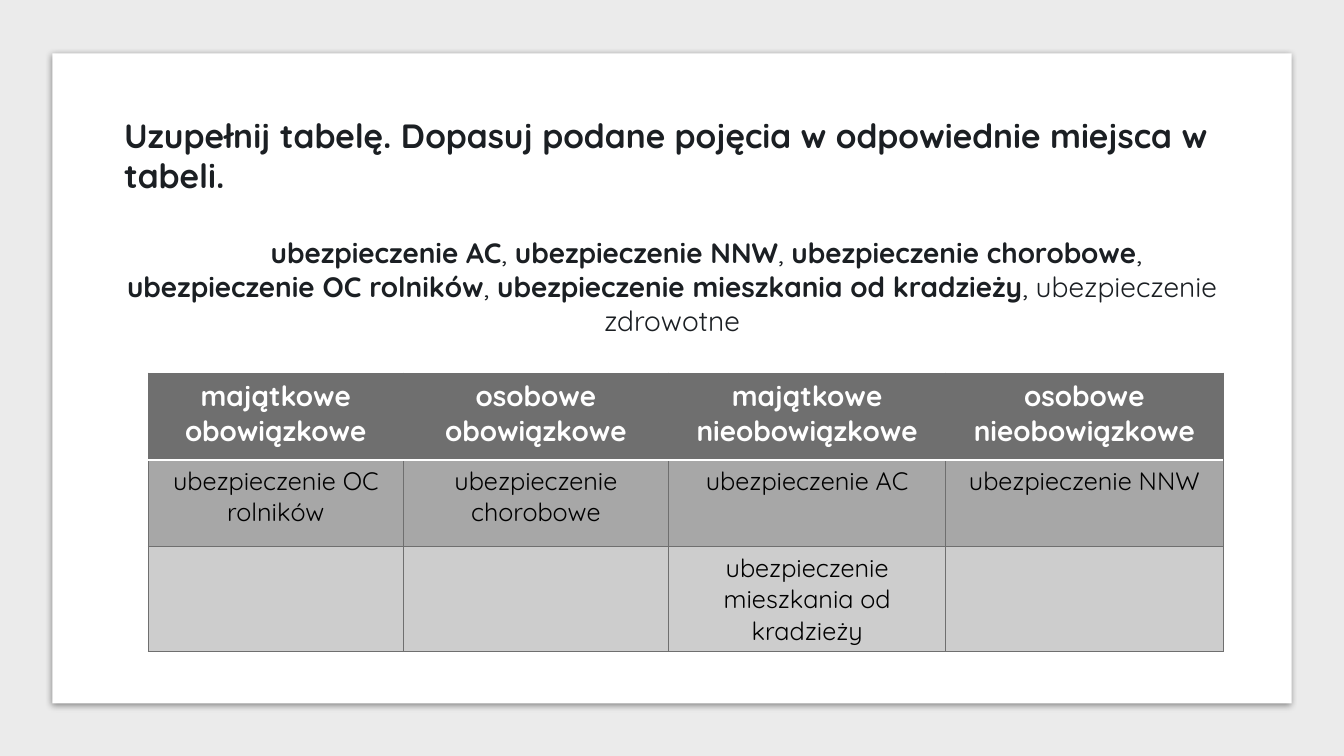
"""Build the insurance table exercise slide."""
from dataclasses import dataclass
from itertools import product

from lxml.etree import SubElement
from pptx import Presentation
from pptx.dml.color import RGBColor
from pptx.enum.shapes import MSO_SHAPE
from pptx.enum.text import MSO_ANCHOR, MSO_AUTO_SIZE, PP_ALIGN
from pptx.oxml import parse_xml
from pptx.oxml.ns import nsdecls, qn
from pptx.util import Inches, Pt

FONT = "Quicksand"
INK = RGBColor(0x1B, 0x1F, 0x23)
BLACK = RGBColor(0x00, 0x00, 0x00)
WHITE = RGBColor(0xFF, 0xFF, 0xFF)
SLATE = RGBColor(0x36, 0x3D, 0x46)
PALE = RGBColor(0xEB, 0xEB, 0xEB)
DARK = RGBColor(0x6F, 0x6F, 0x6F)
MID = RGBColor(0xA7, 0xA7, 0xA7)
LIGHT = RGBColor(0xCD, 0xCD, 0xCD)

WIDTH, HEIGHT = Inches(13.33), Inches(7.5)
COL, ROW = WIDTH / 100, HEIGHT / 100


@dataclass(frozen=True)
class Area:
    """A rectangle on a grid of 100 columns by 100 rows."""
    x: float
    y: float
    w: float
    h: float

    def box(self) -> tuple[int, int, int, int]:
        """Return left, top, width and height in EMU."""
        return int(self.x * COL), int(self.y * ROW), int(self.w * COL), int(self.h * ROW)


@dataclass(frozen=True)
class Backdrop:
    """A plain filled rectangle behind the content."""
    area: Area
    fill: RGBColor
    shadow: bool = False


@dataclass(frozen=True)
class Band:
    """A table row with its height and look."""
    texts: tuple[str, ...]
    height: float
    fill: RGBColor
    color: RGBColor = BLACK
    size: int = 18
    bold: bool = False
    bottom: tuple[RGBColor, float] = (DARK, 0.75)
    top: tuple[RGBColor, float] = (DARK, 0.75)


BACKDROPS = (
    Backdrop(Area(0, 0, 100, 100), PALE),
    Backdrop(Area(3.9, 7.05, 92.2, 86), WHITE, shadow=True),
)
TITLE_AREA = Area(8.48, 14.53, 83.05, 12)
TERMS_AREA = Area(8.48, 30.53, 83.05, 14.7)
TITLE = "Uzupełnij tabelę. Dopasuj podane pojęcia w odpowiednie miejsca w tabeli."
TERMS = ("ubezpieczenie AC", "ubezpieczenie NNW", "ubezpieczenie chorobowe",
         "ubezpieczenie OC rolników", "ubezpieczenie mieszkania od kradzieży")
LAST_TERM = "ubezpieczenie zdrowotne"

TABLE_X, TABLE_Y = 11.03, 49.35
COLUMNS = (18.98, 19.73, 20.63, 20.63)
RULE = (WHITE, 1.5)
BANDS = (
    Band(("majątkowe obowiązkowe", "osobowe obowiązkowe", "majątkowe nieobowiązkowe",
          "osobowe nieobowiązkowe"), 11.5, DARK, WHITE, 20, True, bottom=RULE),
    Band(("ubezpieczenie OC rolników", "ubezpieczenie chorobowe", "ubezpieczenie AC",
          "ubezpieczenie NNW"), 11.5, MID, top=RULE),
    Band(("", "", "ubezpieczenie mieszkania od kradzieży", ""), 13.65, LIGHT),
)


def add_text(p, text: str, *, size: int, color: RGBColor, bold: bool = False,
             align: PP_ALIGN = PP_ALIGN.CENTER) -> None:
    """Append a formatted run to a paragraph."""
    p.alignment = align
    r = p.add_run()
    r.text = text
    r.font.name, r.font.size, r.font.bold = FONT, Pt(size), bold
    r.font.color.rgb = color


def add_backdrop(s, item: Backdrop) -> None:
    """Draw a backdrop behind the placeholders."""
    sp = s.shapes.add_shape(MSO_SHAPE.RECTANGLE, *item.area.box())
    sp.fill.solid()
    sp.fill.fore_color.rgb = item.fill
    sp.line.fill.background()
    sp.shadow.inherit = False
    if item.shadow:
        effects = sp.element.spPr.find(qn("a:effectLst"))
        effects.append(parse_xml(
            f'<a:outerShdw {nsdecls("a")} blurRad="{Pt(5)}" dist="{Pt(1.4)}" dir="5400000" '
            'algn="t" rotWithShape="0"><a:srgbClr val="000000"><a:alpha val="43000"/>'
            '</a:srgbClr></a:outerShdw>'))
    s.shapes.title.element.addprevious(sp.element)


def place(sp, area: Area):
    """Move a placeholder and return its first paragraph."""
    sp.left, sp.top, sp.width, sp.height = area.box()
    tf = sp.text_frame
    tf.word_wrap, tf.auto_size = True, MSO_AUTO_SIZE.NONE
    tf.vertical_anchor = MSO_ANCHOR.TOP
    p = tf.paragraphs[0]
    p.space_before = Pt(0)
    return p


def add_terms(sp) -> None:
    """Fill the body placeholder with the list of terms."""
    p = place(sp, TERMS_AREA)
    pPr = p._p.get_or_add_pPr()
    pPr.set("marL", "0")
    pPr.set("indent", str(Inches(0.68)))
    SubElement(pPr, qn("a:buNone"))
    for term in TERMS:
        add_text(p, term, size=20, color=INK, bold=True)
        add_text(p, ", ", size=20, color=INK)
    add_text(p, LAST_TERM, size=20, color=INK)


def set_borders(cell, band: Band) -> None:
    """Outline a cell on its four sides."""
    tcPr = cell._tc.get_or_add_tcPr()
    side = (DARK, 0.75)
    borders = {"lnL": side, "lnR": side, "lnT": band.top, "lnB": band.bottom}
    for i, (tag, (color, width)) in enumerate(borders.items()):
        tcPr.insert(i, parse_xml(
            f'<a:{tag} {nsdecls("a")} w="{Pt(width)}"><a:solidFill>'
            f'<a:srgbClr val="{color}"/></a:solidFill></a:{tag}>'))


def add_insurance_table(s) -> None:
    """Draw the table of insurance kinds."""
    area = Area(TABLE_X, TABLE_Y, sum(COLUMNS), sum(band.height for band in BANDS))
    table = s.shapes.add_table(len(BANDS), len(COLUMNS), *area.box()).table
    for column, width in zip(table.columns, COLUMNS):
        column.width = int(width * COL)
    for row, band in zip(table.rows, BANDS):
        row.height = int(band.height * ROW)
    for (i, band), j in product(enumerate(BANDS), range(len(COLUMNS))):
        cell = table.cell(i, j)
        cell.margin_left = cell.margin_right = Inches(0.18)
        cell.fill.solid()
        cell.fill.fore_color.rgb = band.fill
        set_borders(cell, band)
        if band.texts[j]:
            add_text(cell.text_frame.paragraphs[0], band.texts[j],
                     size=band.size, color=band.color, bold=band.bold)


def main() -> None:
    """Build and save the slide."""
    prs = Presentation()
    prs.slide_width, prs.slide_height = WIDTH, HEIGHT
    s = prs.slides.add_slide(prs.slide_layouts[1])
    s.background.fill.solid()
    s.background.fill.fore_color.rgb = SLATE
    for item in BACKDROPS:
        add_backdrop(s, item)
    add_text(place(s.shapes.title, TITLE_AREA), TITLE, size=24, color=INK, bold=True,
             align=PP_ALIGN.LEFT)
    add_terms(s.placeholders[1])
    add_insurance_table(s)
    prs.save("out.pptx")


if __name__ == "__main__":
    main()
